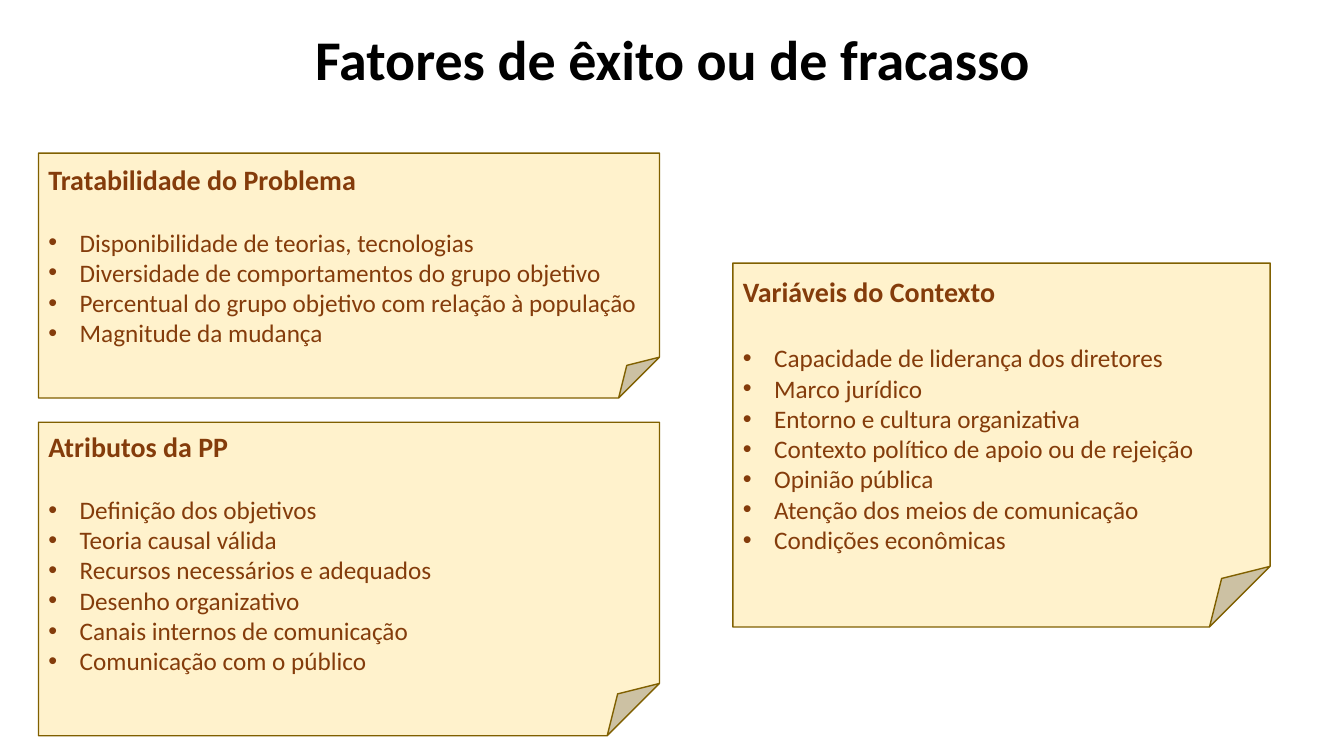
"""Build the slide on factors behind the success or failure of a policy."""
from lxml.etree import SubElement
from pptx import Presentation
from pptx.dml.color import RGBColor
from pptx.enum.shapes import MSO_SHAPE
from pptx.enum.text import MSO_ANCHOR, PP_ALIGN
from pptx.oxml.ns import qn
from pptx.util import Cm, Pt

COLORS = {"title": "000000", "note": "FFF2CC", "outline": "806000", "text": "843C0B"}
FONT = "Calibri"
BULLET_INDENT = Cm(0.79)
LEFT_COLUMN, LEFT_WIDTH = 0.97, 15.65

NOTES = [
    ("Tratabilidade do Problema", (LEFT_COLUMN, 3.86, LEFT_WIDTH, 6.17), 22, [
        "Disponibilidade de teorias, tecnologias",
        "Diversidade de comportamentos do grupo objetivo",
        "Percentual do grupo objetivo com relação à população",
        "Magnitude da mudança",
    ]),
    ("Atributos da PP", (LEFT_COLUMN, 10.64, LEFT_WIDTH, 7.9), 22, [
        "Definição dos objetivos",
        "Teoria causal válida",
        "Recursos necessários e adequados",
        "Desenho organizativo",
        "Canais internos de comunicação",
        "Comunicação com o público",
    ]),
    ("Variáveis do Contexto", (18.47, 6.63, 13.54, 9.17), 24.4, [
        "Capacidade de liderança dos diretores",
        "Marco jurídico",
        "Entorno e cultura organizativa",
        "Contexto político de apoio ou de rejeição",
        "Opinião pública",
        "Atenção dos meios de comunicação",
        "Condições econômicas",
    ]),
]


def color(name):
    return RGBColor.from_string(COLORS[name])


def write(paragraph, text, size, color_name, bold=False, alignment=PP_ALIGN.LEFT):
    paragraph.text = text
    paragraph.alignment = alignment
    font = paragraph.font
    font.name, font.size, font.bold = FONT, Pt(size), bold
    font.color.rgb = color(color_name)


def add_bullet(paragraph):
    properties = paragraph._p.get_or_add_pPr()
    properties.set("marL", str(BULLET_INDENT))
    properties.set("indent", str(-BULLET_INDENT))
    SubElement(properties, qn("a:buFont"), typeface="Arial")
    SubElement(properties, qn("a:buChar"), char="•")


def set_title(slide, text):
    title = slide.shapes.title
    title.left, title.top = Cm(2.34), Cm(0.48)
    title.width, title.height = Cm(29.21), Cm(2.16)
    frame = title.text_frame
    frame.vertical_anchor = MSO_ANCHOR.MIDDLE
    paragraph = frame.paragraphs[0]
    write(paragraph, text, 40, "title", True, PP_ALIGN.CENTER)
    paragraph.line_spacing = 0.9


def add_note(slide, heading, box, gap, items):
    shape = slide.shapes.add_shape(MSO_SHAPE.FOLDED_CORNER, *map(Cm, box))
    shape.shadow.inherit = False
    shape.fill.solid()
    shape.fill.fore_color.rgb = color("note")
    shape.line.color.rgb = color("outline")
    shape.line.width = Pt(1)
    frame = shape.text_frame
    frame.word_wrap = True
    frame.vertical_anchor = MSO_ANCHOR.MIDDLE
    write(frame.paragraphs[0], heading, 20, "text", True)
    frame.paragraphs[0].space_after = Pt(gap)
    for item in items:
        paragraph = frame.add_paragraph()
        write(paragraph, item, 18, "text")
        add_bullet(paragraph)


def main():
    presentation = Presentation()
    presentation.slide_width, presentation.slide_height = Cm(33.87), Cm(19.05)
    slide = presentation.slides.add_slide(presentation.slide_layouts[5])
    set_title(slide, "Fatores de êxito ou de fracasso")
    for note in NOTES:
        add_note(slide, *note)
    presentation.save("out.pptx")


if __name__ == "__main__":
    main()
